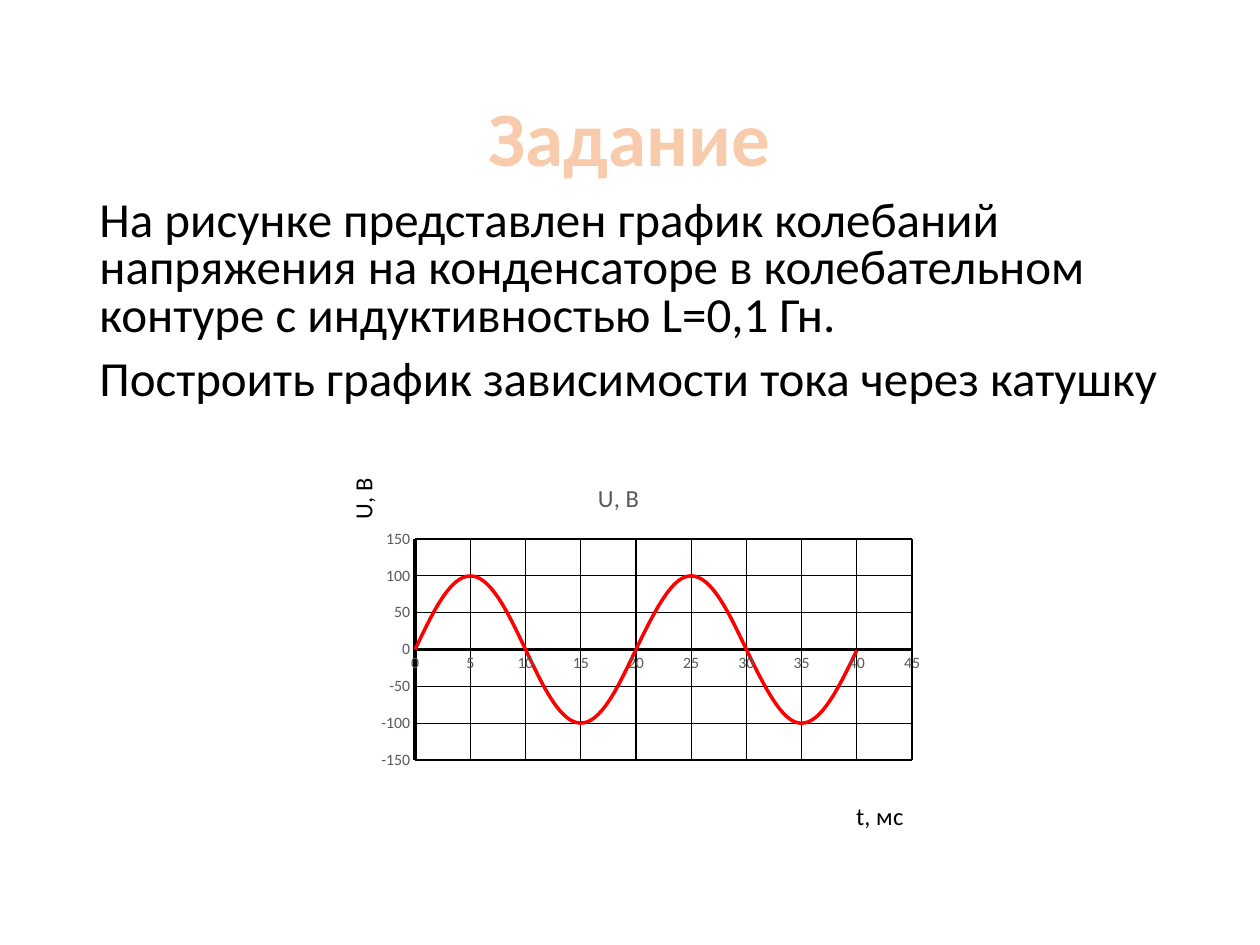
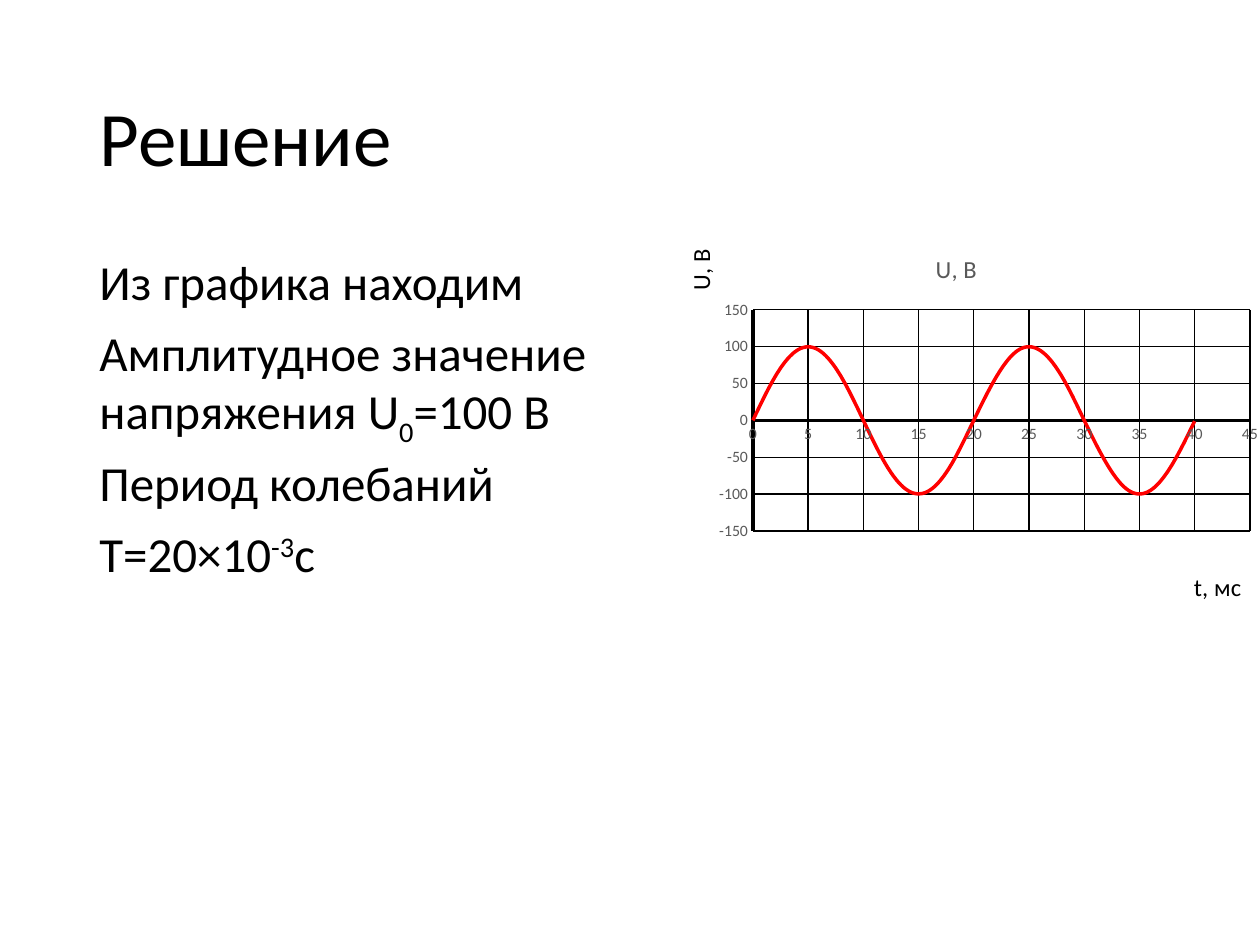
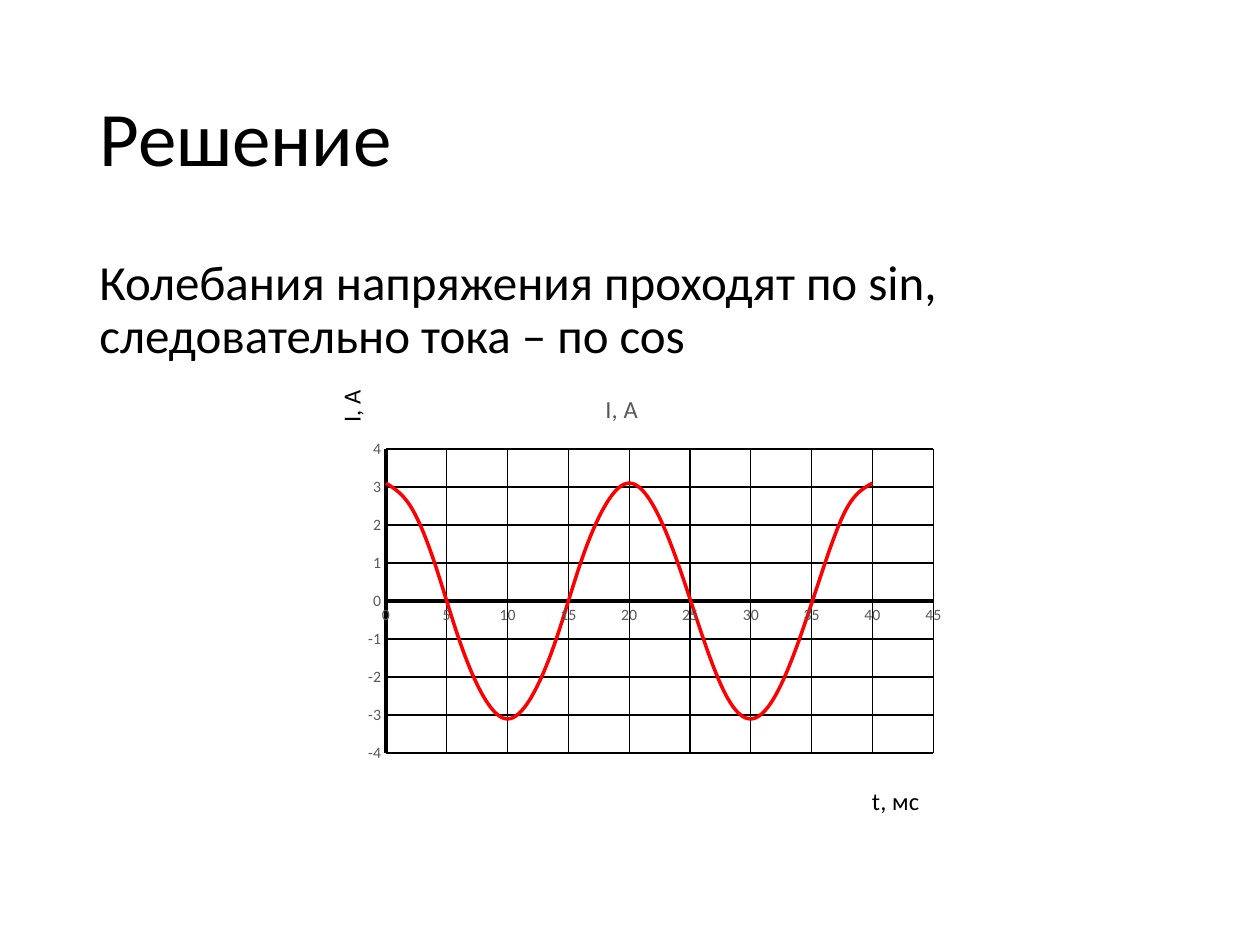
"""Build three slides on voltage and current oscillations in an LC circuit."""
from lxml import etree
from pptx import Presentation
from pptx.chart.data import XyChartData
from pptx.dml.color import RGBColor
from pptx.enum.chart import XL_CHART_TYPE, XL_TICK_MARK
from pptx.enum.text import MSO_ANCHOR, MSO_AUTO_SIZE, PP_ALIGN
from pptx.oxml.ns import qn
from pptx.util import Cm, Pt

SMOOTH_SCATTER = XL_CHART_TYPE.XY_SCATTER_SMOOTH_NO_MARKERS
NO_TICK = XL_TICK_MARK.NONE
LEFT, CENTER = PP_ALIGN.LEFT, PP_ALIGN.CENTER
MIDDLE, TOP = MSO_ANCHOR.MIDDLE, MSO_ANCHOR.TOP
NO_AUTOFIT = MSO_AUTO_SIZE.NONE

FONT = "Calibri"
COLORS = {
    "text": "000000",
    "label": "595959",
    "curve": "FF0000",
    "accent": "F8CBAD",
    "accent_outline": "ED7D31",
}
MARGIN, CONTENT_WIDTH = 1.75, 21.89
TITLE_BOX = (MARGIN, 1.02, CONTENT_WIDTH, 3.68)
BODY_TOP = 5.08

TIMES = range(0, 41, 2)
VOLTAGE = {
    "name": "U, В",
    "title": "U, В",
    "values": [0, 59, 95, 95, 59, 0, -59, -95, -95, -59, 0,
               58, 95, 95, 59, 0, -58, -95, -95, -59, -1],
    "limit": 150,
    "step": 50,
    "plot": (0.177, 0.203, 0.789, 0.585),
}
CURRENT = {
    "name": "Series 1",
    "title": "I, А",
    "values": [3.1, 2.5, 1, -1, -2.5, -3.1, -2.5, -1, 1, 2.5, 3.1,
               2.5, 1, -0.9, -2.5, -3.1, -2.5, -1, 0.9, 2.5, 3.1],
    "limit": 4,
    "step": 1,
    "plot": (0.145, 0.167, 0.824, 0.656),
}


class Deck:
    """Hold the shared style and the current slide."""

    def __init__(self):
        """Start an empty presentation."""
        self.presentation = Presentation()
        self.presentation.slide_width = Cm(25.4)
        self.presentation.slide_height = Cm(19.05)
        self.slide = None

    def add_slide(self):
        """Start a slide with title and body placeholders."""
        layout = self.presentation.slide_layouts[1]
        self.slide = self.presentation.slides.add_slide(layout)

    def style_font(self, font, size, color="text", bold=False):
        """Apply the deck font with a size and a named colour."""
        font.name = FONT
        font.size = Pt(size)
        font.bold = bold
        font.color.rgb = RGBColor.from_string(COLORS[color])

    def style_line(self, line, width, color="text"):
        """Apply a solid line."""
        line.color.rgb = RGBColor.from_string(COLORS[color])
        line.width = Pt(width)

    def add_run(self, paragraph, text, size, color="text", bold=False):
        """Append a styled run."""
        run = paragraph.add_run()
        run.text = text
        self.style_font(run.font, size, color, bold)
        return run

    def place(self, shape, box, anchor):
        """Move a placeholder and fix its text frame."""
        shape.left, shape.top, shape.width, shape.height = map(Cm, box)
        frame = shape.text_frame
        frame.word_wrap = True
        frame.auto_size = NO_AUTOFIT
        frame.vertical_anchor = anchor
        return frame

    def title(self, text, accented=False):
        """Write the slide title, plain or accented."""
        frame = self.place(self.slide.shapes.title, TITLE_BOX, MIDDLE)
        paragraph = frame.paragraphs[0]
        paragraph.line_spacing = 0.9
        paragraph.alignment = CENTER if accented else LEFT
        color = "accent" if accented else "text"
        run = self.add_run(paragraph, text, 44, color, accented)
        if accented:
            outline = etree.Element(qn("a:ln"), w=str(Pt(1.75)))
            fill = etree.SubElement(outline, qn("a:solidFill"))
            etree.SubElement(fill, qn("a:srgbClr"), val=COLORS["accent_outline"])
            run.font._element.insert(0, outline)

    def body(self, paragraphs, top, width, height, spacing=0.9):
        """Write paragraphs of (text, baseline percent) runs without bullets."""
        box = (MARGIN, top, width, height)
        frame = self.place(self.slide.placeholders[1], box, TOP)
        for index, runs in enumerate(paragraphs):
            paragraph = frame.add_paragraph() if index else frame.paragraphs[0]
            paragraph.line_spacing = spacing
            paragraph.space_before = Pt(10)
            properties = paragraph._p.get_or_add_pPr()
            properties.set("marL", "0")
            properties.set("indent", "0")
            etree.SubElement(properties, qn("a:buNone"))
            for text, baseline in runs:
                run = self.add_run(paragraph, text, 28)
                if baseline:
                    run.font._element.set("baseline", str(baseline * 1000))

    def set_layout(self, element, **fractions):
        """Place a chart part by fractions of the chart area."""
        for old_layout in element.findall(qn("c:layout")):
            element.remove(old_layout)
        layout = etree.Element(qn("c:layout"))
        manual = etree.SubElement(layout, qn("c:manualLayout"))
        if "w" in fractions:
            etree.SubElement(manual, qn("c:layoutTarget"), val="inner")
        for mode in ("xMode", "yMode"):
            etree.SubElement(manual, qn(f"c:{mode}"), val="edge")
        for key, value in fractions.items():
            etree.SubElement(manual, qn(f"c:{key}"), val=str(value))
        position = 0 if element.find(qn("c:tx")) is None else 1
        element.insert(position, layout)

    def axis(self, axis, text, limits, step, width, title_at, rotation):
        """Format one axis with its scale, grid and title."""
        axis.minimum_scale, axis.maximum_scale = limits
        axis.major_unit = step
        axis.major_tick_mark = axis.minor_tick_mark = NO_TICK
        self.style_font(axis.tick_labels.font, 9, "label")
        self.style_line(axis.format.line, width)
        axis.has_major_gridlines = True
        self.style_line(axis.major_gridlines.format.line, 0.75)
        frame = axis.axis_title.text_frame
        self.add_run(frame.paragraphs[0], text, 14)
        frame._txBody.bodyPr.set("rot", str(rotation * 60000))
        x, y = title_at
        self.set_layout(axis.axis_title._element, x=x, y=y)

    def chart(self, data, box):
        """Draw one oscillation curve over time."""
        chart_data = XyChartData()
        points = chart_data.add_series(data["name"])
        for time, value in zip(TIMES, data["values"]):
            points.add_data_point(time, value)
        frame = self.slide.shapes.add_chart(SMOOTH_SCATTER, *map(Cm, box), chart_data)
        chart = frame.chart
        self.style_font(chart.font, 10)
        chart.has_legend = False
        chart.has_title = True
        heading = chart.chart_title.text_frame.paragraphs[0]
        self.add_run(heading, data["title"], 14, "label")

        limit = data["limit"]
        self.axis(chart.category_axis, "t, мс", (0, 45), 5, 2, (0.87, 0.88), 0)
        self.axis(chart.value_axis, data["title"], (-limit, limit), data["step"],
                  2.5, (0.06, 0.03), -90)
        plot_area = chart._chartSpace.chart.plotArea
        self.set_layout(plot_area, **dict(zip("xywh", data["plot"])))

        plot = chart.plots[0]
        plot.vary_by_categories = False
        curve = plot.series[0]
        self.style_line(curve.format.line, 2, "curve")
        curve._element.find(qn("c:smooth")).set("val", "1")


def main():
    """Build and save the slides."""
    deck = Deck()

    deck.add_slide()
    deck.title("Задание", accented=True)
    deck.body([
        [("На рисунке представлен график колебаний напряжения на конденсаторе "
          "в колебательном контуре с индуктивностью L=0,1 Гн.", 0)],
        [("Построить график зависимости тока через катушку", 0)],
    ], 3.91, CONTENT_WIDTH, 4.85, spacing=0.8)
    deck.chart(VOLTAGE, (6.12, 9.32, 12.7, 7.62))

    deck.add_slide()
    deck.title("Решение")
    deck.body([
        [("Из графика находим", 0)],
        [("Амплитудное значение напряжения U", 0), ("0", -25), ("=100 В", 0)],
        [("Период колебаний", 0)],
        [("T=20×10", 0), ("-3", 30), ("c", 0)],
    ], BODY_TOP, 12.19, 12.09)
    deck.chart(VOLTAGE, (12.93, 4.7, 12.7, 7.62))

    deck.add_slide()
    deck.title("Решение")
    deck.body([
        [("Колебания напряжения проходят по sin, "
          "следовательно тока – по cos", 0)],
    ], BODY_TOP, CONTENT_WIDTH, 3.02)
    deck.chart(CURRENT, (5.84, 7.49, 13.39, 9.35))

    deck.presentation.save("out.pptx")


if __name__ == "__main__":
    main()
